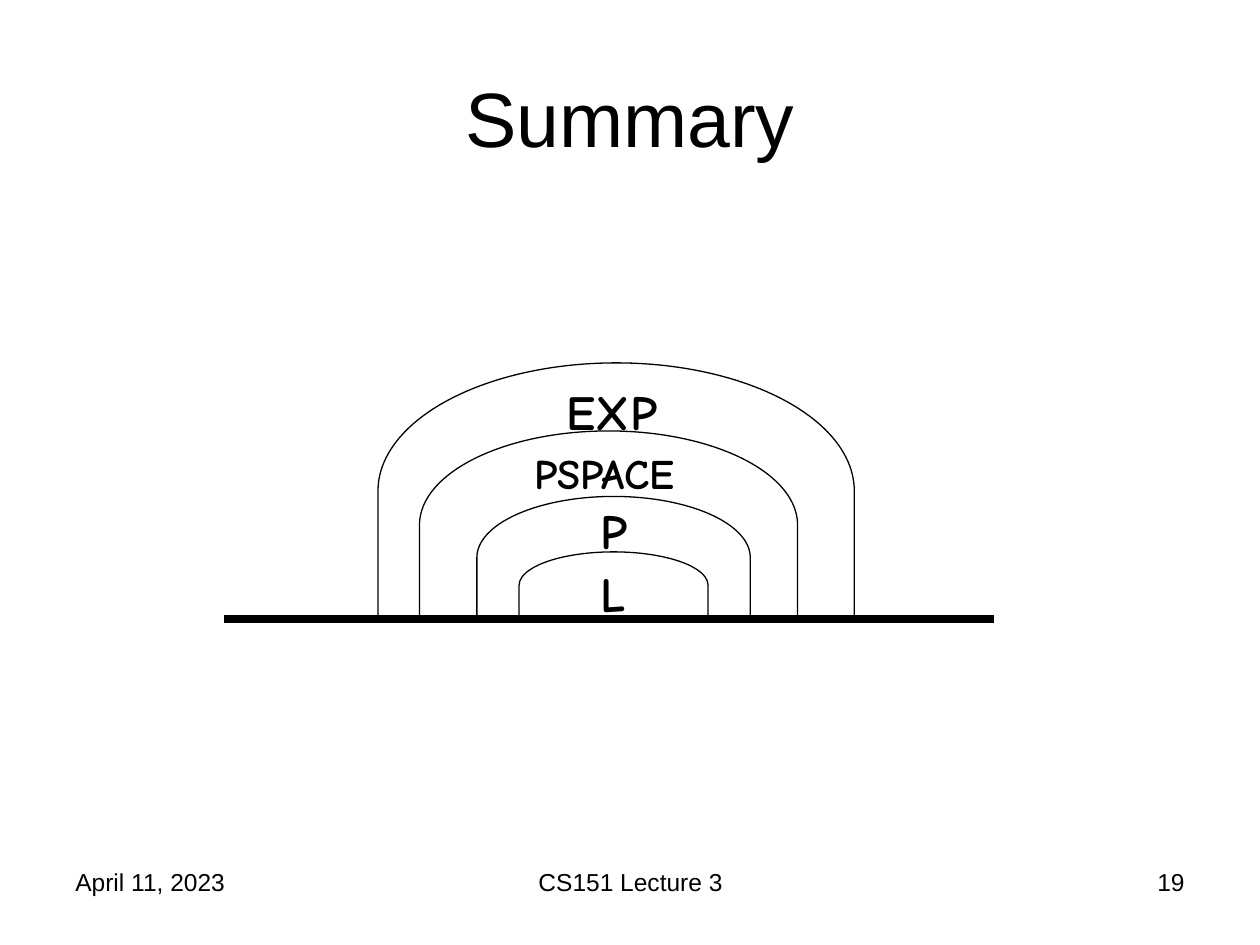
from lxml.etree import SubElement
from pptx import Presentation
from pptx.dml.color import RGBColor
from pptx.enum.shapes import MSO_CONNECTOR, MSO_SHAPE
from pptx.enum.text import MSO_ANCHOR, MSO_AUTO_SIZE, PP_ALIGN
from pptx.oxml.ns import qn
from pptx.util import Inches, Pt

COLORS = {"ink": "000000", "paper": "FFFFFF"}
BASE = 4.91

# centre x, width, height of each class, from the inside out
ARCHES = [
    (4.87, 1.5, 0.53),
    (4.87, 2.17, 0.97),
    (4.83, 3, 1.49),
    (4.89, 3.78, 2.03),
]

# text, left, top, width, height, size
LABELS = [
    ("EXP", 4.4, 2.98, 0.93, 0.57, 28),
    ("PSPACE", 4.14, 3.5, 1.44, 0.5, 24),
    ("P", 4.67, 3.92, 0.41, 0.57, 28),
    ("L", 4.67, 4.42, 0.55, 0.43, 28),
]

# text, left, width, alignment
FOOTER = [
    ("April 11, 2023", 0.5, 2.33, PP_ALIGN.LEFT),
    ("CS151 Lecture 3", 3.42, 3.17, PP_ALIGN.CENTER),
    ("19", 7.17, 2.33, PP_ALIGN.RIGHT),
]


def color(name):
    return RGBColor.from_string(COLORS[name])


def add_text(slide, text, box, size, align=PP_ALIGN.LEFT, face="Arial"):
    frame = slide.shapes.add_textbox(*map(Inches, box)).text_frame
    frame.word_wrap = True
    par = frame.paragraphs[0]
    par.text = text
    par.alignment = align
    par.font.name = face
    par.font.size = Pt(size)
    par.font.color.rgb = color("ink")
    return frame


def add_label(slide, text, left, top, width, height, size):
    """Add a bold class name in a box that fits its text."""
    box = (left, top, width, height)
    frame = add_text(slide, text, box, size, face="Comic Neue")
    frame.word_wrap = False
    frame.auto_size = MSO_AUTO_SIZE.SHAPE_TO_FIT_TEXT
    frame.paragraphs[0].font.bold = True


def add_arch(slide, mid, width, height):
    """Stand a delay shape on the base line by turning it upright."""
    left = mid - height / 2
    top = BASE - height / 2 - width / 2
    arch = slide.shapes.add_shape(
        MSO_SHAPE.FLOWCHART_DELAY, *map(Inches, (left, top, height, width))
    )
    arch.rotation = 270
    arch.shadow.inherit = False
    arch.fill.background()
    arch.line.color.rgb = color("ink")
    arch.line.width = Pt(0.75)


def add_base(slide, start, end):
    line = slide.shapes.add_connector(
        MSO_CONNECTOR.STRAIGHT, *map(Inches, (start, BASE, end, BASE))
    )
    line.line.color.rgb = color("ink")
    line.line.width = Pt(4.5)
    SubElement(line._element.spPr, qn("a:effectLst"))


def main():
    deck = Presentation()
    deck.slide_width, deck.slide_height = Inches(10), Inches(7.5)
    slide = deck.slides.add_slide(deck.slide_layouts[6])
    slide.background.fill.solid()
    slide.background.fill.fore_color.rgb = color("paper")

    title = add_text(slide, "Summary", (0.5, 0.3, 9, 1.25), 44, PP_ALIGN.CENTER)
    title.vertical_anchor = MSO_ANCHOR.MIDDLE
    add_base(slide, 1.78, 7.89)
    for arch in ARCHES:
        add_arch(slide, *arch)
    for label in LABELS:
        add_label(slide, *label)
    for text, left, width, align in FOOTER:
        add_text(slide, text, (left, 6.83, width, 0.52), 14, align)
    deck.save("out.pptx")


if __name__ == "__main__":
    main()
